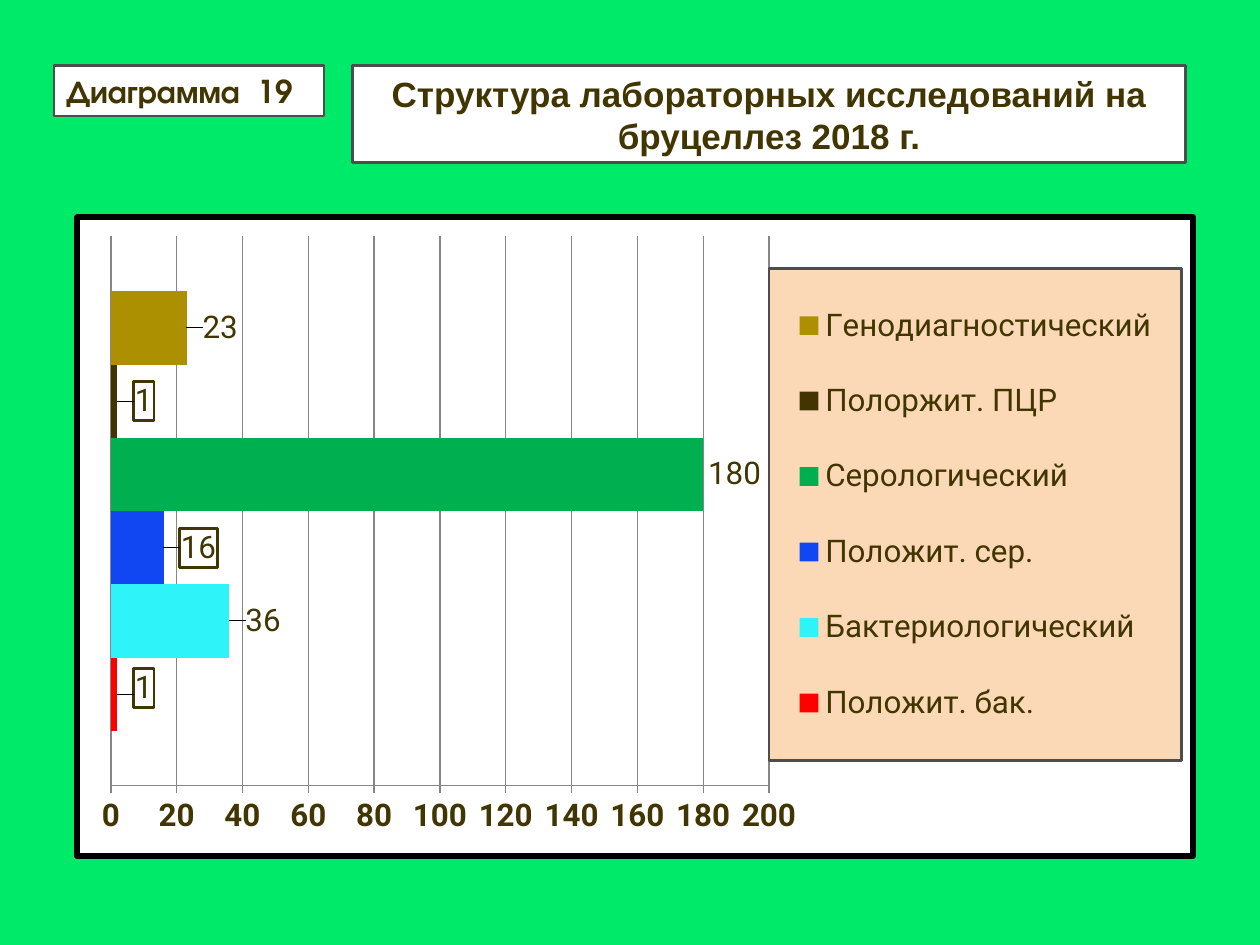
"""Slide with a bar chart of laboratory tests for brucellosis."""
from dataclasses import dataclass

from lxml import etree
from pptx import Presentation
from pptx import util as u
from pptx.chart import data
from pptx.chart.chart import Chart
from pptx.dml.color import RGBColor
from pptx.enum import chart as ch, shapes, text
from pptx.oxml import parse_xml
from pptx.oxml.ns import nsdecls, qn
from pptx.slide import Slide


@dataclass(frozen=True)
class Theme:
    backdrop: str = "00EA6A"
    paper: str = "FFFFFF"
    ink: str = "413501"
    outline: str = "4D4D4D"
    grid: str = "868686"
    legend: str = "FCD9B6"
    frame: str = "000000"
    chart_font: str = "Roboto"
    body_size: int = 18
    title_size: int = 20


@dataclass(frozen=True)
class Heading:
    wording: str
    left: float
    width: float
    height: float
    font: str
    size: int
    wrap: bool
    right_inset: float


@dataclass(frozen=True)
class Test:
    name: str
    count: int
    color: str
    shift: tuple[float, float]
    caption: str = ""


THEME = Theme()
HEADINGS = [
    Heading("Диаграмма  19", 1.09, 5.44, 1.02, "TeX Gyre Adventor", THEME.body_size, False, 0.62),
    Heading("Структура лабораторных исследований на бруцеллез 2018 г.",
            7.11, 16.79, 1.96, "Arial", THEME.title_size, True, 0.25),
]
TESTS = [
    Test("Положит. бак.", 2, "FF0000", (0.01, -0.01), "1"),
    Test("Бактериологический", 36, "2EF3F8", (0.01, 0)),
    Test("Положит. сер.", 16, "1147F3", (0.01, 0), "16"),
    Test("Серологический", 180, "00B050", (0, 0)),
    Test("Полоржит. ПЦР", 2, "413501", (0.01, 0), "1"),
    Test("Генодиагностический", 23, "AC9002", (0.01, 0)),
]


def rgb(color: str) -> RGBColor:
    return RGBColor.from_string(color)


def style_font(font, color: str, size: int, name: str, bold: bool) -> None:
    font.size, font.name, font.bold = u.Pt(size), name, bold
    font.color.rgb = rgb(color)


def box_format(line: str, points: float, fill: str = "") -> etree._Element:
    paint = f'<a:solidFill><a:srgbClr val="{fill}"/></a:solidFill>' if fill else "<a:noFill/>"
    return parse_xml(
        f'<c:spPr {nsdecls("c", "a")}>{paint}<a:ln w="{u.Pt(points)}"><a:solidFill>'
        f'<a:srgbClr val="{line}"/></a:solidFill></a:ln></c:spPr>')


def place(parent: etree._Element, index: int, inner: bool = False, **edges: float) -> None:
    """Give a chart part a manual layout; edges are fractions of the chart."""
    for old in parent.findall(qn("c:layout")):
        parent.remove(old)
    modes = '<c:layoutTarget val="inner"/>' if inner else ""
    if "w" in edges:
        modes += '<c:xMode val="edge"/><c:yMode val="edge"/>'
    sizes = "".join(f'<c:{edge} val="{value}"/>' for edge, value in edges.items())
    parent.insert(index, parse_xml(
        f'<c:layout {nsdecls("c")}><c:manualLayout>{modes}{sizes}</c:manualLayout></c:layout>'))


def add_heading(slide: Slide, heading: Heading) -> None:
    panel = slide.shapes.add_shape(
        shapes.MSO_SHAPE.RECTANGLE, u.Cm(heading.left), u.Cm(1.32),
        u.Cm(heading.width), u.Cm(heading.height))
    panel.shadow.inherit = False
    panel.fill.solid()
    panel.fill.fore_color.rgb = rgb(THEME.paper)
    panel.line.color.rgb = rgb(THEME.outline)
    panel.line.width = u.Pt(1.5)
    frame = panel.text_frame
    frame.text = heading.wording
    frame.word_wrap = heading.wrap
    frame.margin_right = u.Cm(heading.right_inset)
    line = frame.paragraphs[0]
    line.alignment = text.PP_ALIGN.CENTER
    style_font(line.runs[0].font, THEME.ink, heading.size, heading.font, True)


def style_bar(series, test: Test) -> None:
    series.format.fill.solid()
    series.format.fill.fore_color.rgb = rgb(test.color)
    label = series.points[0].data_label
    if test.caption:
        label.text_frame.text = test.caption
        font = label.text_frame.paragraphs[0].runs[0].font
    else:
        font = label.font
    style_font(font, THEME.ink, THEME.body_size, THEME.chart_font, False)
    label.position = ch.XL_LABEL_POSITION.OUTSIDE_END
    node = series._element.find(f".//{qn('c:dLbl')}")
    place(node, 1, x=test.shift[0], y=test.shift[1])
    node.insert(3 if test.caption else 2, box_format(THEME.ink, 1.5))


def style_axes(chart: Chart) -> None:
    chart.category_axis.visible = False
    scale = chart.value_axis
    scale.minimum_scale, scale.maximum_scale, scale.major_unit = 0, 200, 20
    scale.major_tick_mark = ch.XL_TICK_MARK.CROSS
    scale.has_major_gridlines = True
    for line in (scale.format.line, scale.major_gridlines.format.line):
        line.color.rgb = rgb(THEME.grid)
        line.width = u.Pt(0.75)
    style_font(scale.tick_labels.font, THEME.ink, THEME.body_size, THEME.chart_font, True)


def style_legend(chart: Chart) -> None:
    chart.has_legend = True
    legend = chart.legend
    legend.position = ch.XL_LEGEND_POSITION.RIGHT
    legend.include_in_layout = False
    style_font(legend.font, THEME.ink, THEME.body_size, THEME.chart_font, False)
    node = legend._element
    place(node, 1, x=0.62, y=0.08, w=0.37, h=0.77)
    node.find(qn("c:txPr")).addprevious(box_format(THEME.outline, 1.5, THEME.legend))


def add_tests_chart(slide: Slide) -> None:
    counts = data.CategoryChartData()
    counts.categories = ["1"]
    for test in TESTS:
        counts.add_series(test.name, [test.count])
    chart = slide.shapes.add_chart(
        ch.XL_CHART_TYPE.BAR_CLUSTERED, u.Cm(1.5), u.Cm(4.32), u.Cm(22.61), u.Cm(13), counts).chart
    chart.has_title = False
    style_font(chart.font, THEME.outline, THEME.body_size, THEME.chart_font, False)
    bars = chart.plots[0]
    bars.vary_by_categories = False
    bars.gap_width, bars.overlap = 150, 0
    for series, test in zip(bars.series, TESTS):
        style_bar(series, test)
    style_axes(chart)
    style_legend(chart)
    body = chart._chartSpace.find(qn("c:chart"))
    place(body.find(qn("c:plotArea")), 0, inner=True, x=0.03, y=0.03, w=0.59, h=0.86)
    body.addnext(box_format(THEME.frame, 3.5, THEME.paper))


def main() -> None:
    deck = Presentation()
    deck.slide_width, deck.slide_height = u.Cm(25.4), u.Cm(19.05)
    slide = deck.slides.add_slide(deck.slide_layouts[6])
    slide.background.fill.solid()
    slide.background.fill.fore_color.rgb = rgb(THEME.backdrop)
    label, title = HEADINGS
    add_heading(slide, label)
    add_tests_chart(slide)
    add_heading(slide, title)
    deck.save("out.pptx")


if __name__ == "__main__":
    main()
